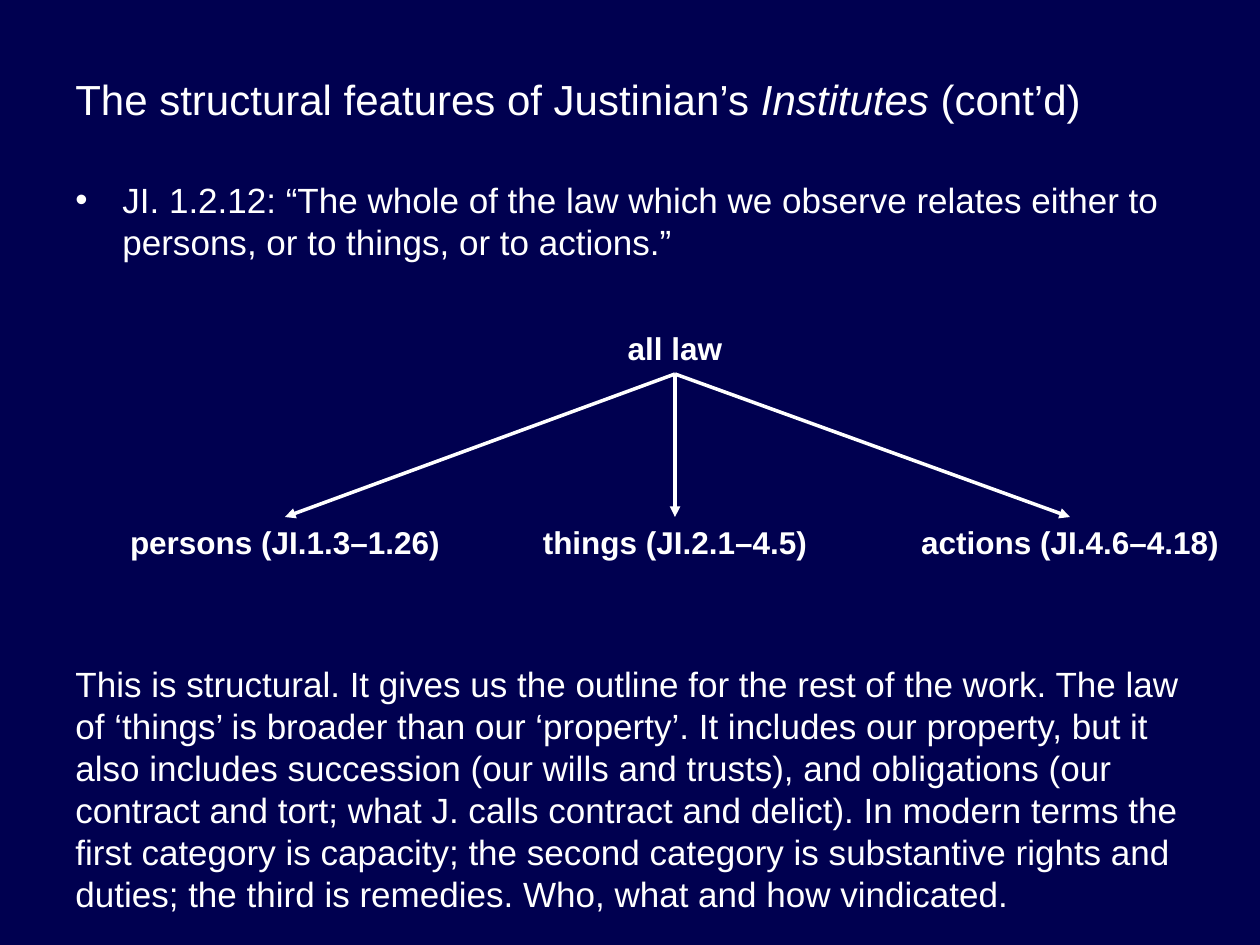
from lxml import etree
from pptx import Presentation
from pptx.dml.color import RGBColor
from pptx.enum.shapes import MSO_CONNECTOR, MSO_SHAPE
from pptx.enum.text import MSO_ANCHOR, PP_ALIGN
from pptx.oxml.ns import qn
from pptx.util import Pt

EMU_PER_PX = 914400 / 126
SLIDE_W, SLIDE_H = 1260, 945
COLORS = {"background": "000050", "text": "FFFFFF"}
FONT = "Arial"
STRAIGHT, RECTANGLE = MSO_CONNECTOR.STRAIGHT, MSO_SHAPE.RECTANGLE
LEFT, CENTER = PP_ALIGN.LEFT, PP_ALIGN.CENTER
TOP, MIDDLE = MSO_ANCHOR.TOP, MSO_ANCHOR.MIDDLE

MARGIN = 63
BODY_W = 1164
LABEL_H = 50
ROOT_X, ROOT_Y = 675, 323
BRANCH_Y = 517
BULLET_INDENT = 47

TITLE = [
    ("The structural features of Justinian’s ", {}),
    ("Institutes", {"italic": True}),
    (" (cont’d)", {}),
]
QUOTE = ("JI. 1.2.12: “The whole of the law which we observe relates either "
         "to persons, or to things, or to actions.”")
# Category, centre, width
BRANCHES = [
    ("persons (JI.1.3–1.26)", 285, 380),
    ("things (JI.2.1–4.5)", 675, 292),
    ("actions (JI.4.6–4.18)", 1070, 347),
]
COMMENTARY = (
    "This is structural. It gives us the outline for the rest of the work. "
    "The law of ‘things’ is broader than our ‘property’. It includes our "
    "property, but it also includes succession (our wills and trusts), and "
    "obligations (our contract and tort; what J. calls contract and delict). "
    "In modern terms the first category is capacity; the second category is "
    "substantive rights and duties; the third is remedies. Who, what and how "
    "vindicated.")


def px(length):
    return round(length * EMU_PER_PX)


def color(name):
    return RGBColor.from_string(COLORS[name])


def add_background(slide):
    backdrop = slide.shapes.add_shape(RECTANGLE, 0, 0, px(SLIDE_W), px(SLIDE_H))
    backdrop.shadow.inherit = False
    backdrop.fill.solid()
    backdrop.fill.fore_color.rgb = color("background")
    backdrop.line.fill.background()


def add_text(slide, box, runs, size, align=LEFT, anchor=TOP, **font_format):
    frame = slide.shapes.add_textbox(*map(px, box)).text_frame
    frame.word_wrap = True
    frame.vertical_anchor = anchor
    paragraph = frame.paragraphs[0]
    paragraph.alignment = align
    for words, run_format in runs:
        run = paragraph.add_run()
        run.text = words
        run.font.color.rgb = color("text")
        settings = {"name": FONT, "size": Pt(size), **font_format, **run_format}
        for attribute, value in settings.items():
            setattr(run.font, attribute, value)
    return paragraph


def add_bullet(paragraph):
    properties = paragraph._p.get_or_add_pPr()
    properties.set("marL", str(px(BULLET_INDENT)))
    properties.set("indent", str(-px(BULLET_INDENT)))
    etree.SubElement(properties, qn("a:buFont"), typeface=FONT)
    etree.SubElement(properties, qn("a:buChar"), char="•")


def add_label(slide, words, center, top, width):
    box = (center - width / 2, top, width, LABEL_H)
    add_text(slide, box, [(words, {})], 18, align=CENTER, bold=True)


def add_arrow(slide, start, end):
    arrow = slide.shapes.add_connector(STRAIGHT, *map(px, (*start, *end)))
    arrow.line.color.rgb = color("text")
    arrow.line.width = Pt(2)
    etree.SubElement(arrow.line._get_or_add_ln(), qn("a:tailEnd"), type="triangle")
    etree.SubElement(arrow._element.spPr, qn("a:effectLst"))


def main():
    deck = Presentation()
    deck.slide_width, deck.slide_height = px(SLIDE_W), px(SLIDE_H)
    slide = deck.slides.add_slide(deck.slide_layouts[6])
    add_background(slide)

    # Title and quotation
    add_text(slide, (MARGIN, 67, 1197, 63), TITLE, 24, anchor=MIDDLE)
    quote = add_text(slide, (MARGIN, 172, BODY_W, 97), [(QUOTE, {})], 20)
    add_bullet(quote)

    # Division of the law
    add_label(slide, "all law", ROOT_X, ROOT_Y, 365)
    for category, center, width in BRANCHES:
        add_label(slide, category, center, BRANCH_Y, width)
        add_arrow(slide, (ROOT_X, ROOT_Y + LABEL_H + 1), (center, BRANCH_Y))

    # Commentary
    add_text(slide, (MARGIN, 656, BODY_W, 267), [(COMMENTARY, {})], 20)
    deck.save("out.pptx")


if __name__ == "__main__":
    main()
